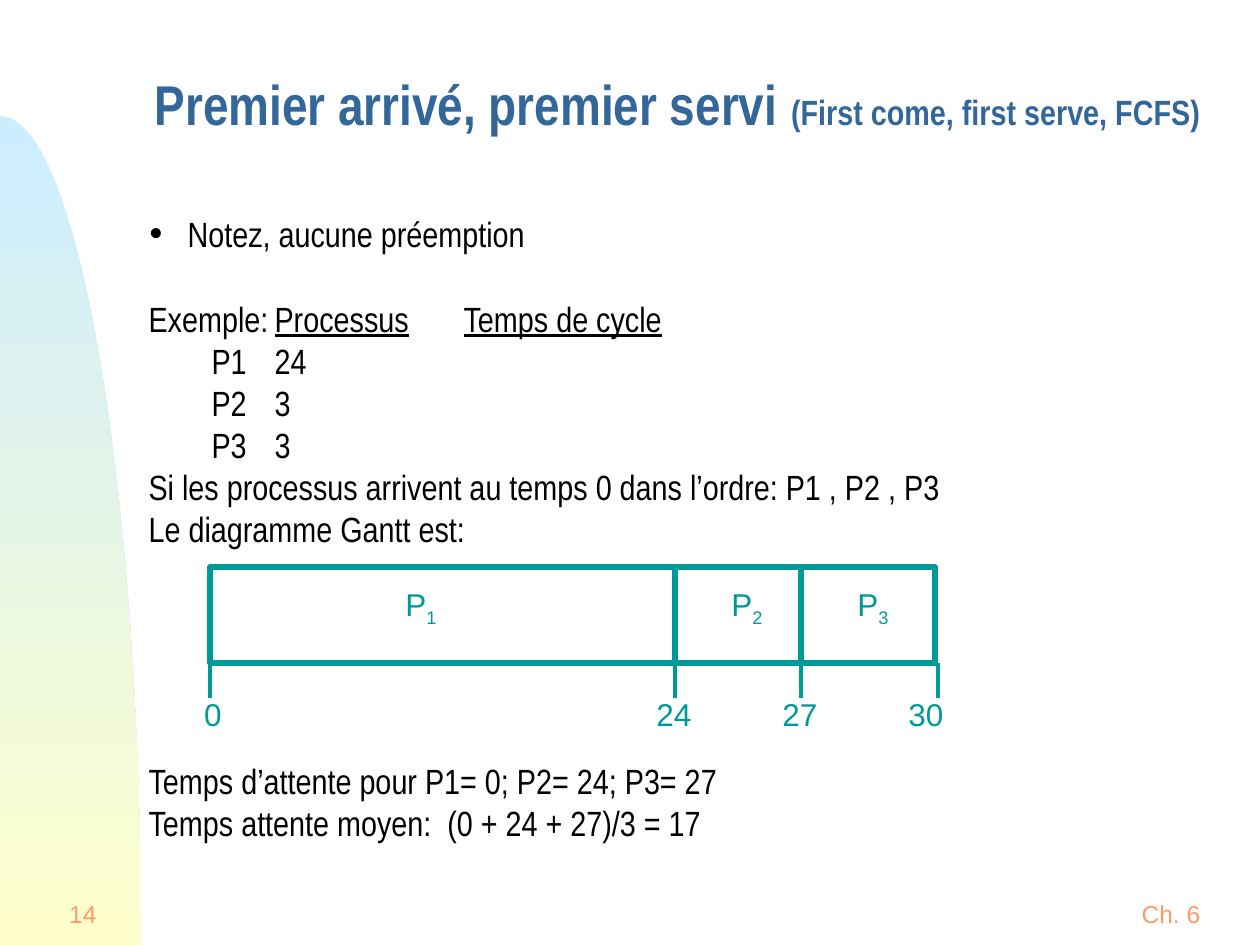
import dataclasses

import lxml.etree
import pptx
import pptx.dml.color
import pptx.enum.shapes
import pptx.enum.text
import pptx.oxml.ns
import pptx.util

SCALE = 914400 / 126
ALIGN = pptx.enum.text.PP_ALIGN
ANCHOR = pptx.enum.text.MSO_ANCHOR
NO_FIT = pptx.enum.text.MSO_AUTO_SIZE.NONE


def px(length):
    return pptx.util.Emu(round(length * SCALE))


def rgb(value):
    return pptx.dml.color.RGBColor.from_string(value)


def apply(target, values):
    for name, value in values.items():
        setattr(target, name, value)


def add_xml(parent, tag, **attributes):
    name = pptx.oxml.ns.qn(tag)
    return lxml.etree.SubElement(parent, name, **attributes)


@dataclasses.dataclass(frozen=True)
class Theme:
    paper: str = "FFFFFF"
    sky: str = "CCECFF"
    sand: str = "FFFFCC"
    heading: str = "336699"
    text: str = "010000"
    gantt: str = "009999"
    footer: str = "FF9966"
    heading_font: str = "Arial Narrow"
    label_font: str = "Arial"
    title_size: int = 32
    body_size: int = 20
    label_size: int = 18
    footer_size: int = 14
    body_pitch: int = 24
    frame_width: float = 3
    tick_width: float = 2.25


class SlideBuilder:
    def __init__(self, page, theme):
        self.page = page
        self.theme = theme

    def place(self, box, left, top, width, height):
        apply(box, {"left": px(left), "top": px(top),
                    "width": px(width), "height": px(height)})

    def span(self, para, text, size, color, font, **values):
        span = para.add_run()
        span.text = text
        apply(span.font, {"size": pptx.util.Pt(size), "name": font, **values})
        span.font.color.rgb = rgb(color)
        return span

    def title(self, bounds, main, detail):
        theme = self.theme
        box = self.page.shapes.title
        self.place(box, *bounds)
        apply(box.text_frame, {"auto_size": NO_FIT, "word_wrap": True,
                               "vertical_anchor": ANCHOR.MIDDLE})
        para = box.text_frame.paragraphs[0]
        apply(para, {"alignment": ALIGN.LEFT, "line_spacing": 0.7})
        for text, size in ((main, theme.title_size), (detail, theme.body_size)):
            self.span(para, text, size, theme.heading, theme.heading_font, bold=True)

    def body(self, bounds, lines):
        box = self.page.placeholders[1]
        self.place(box, *bounds)
        frame = box.text_frame
        apply(frame, {"auto_size": NO_FIT, "word_wrap": True,
                      "vertical_anchor": ANCHOR.TOP, "margin_top": px(13)})
        for index, line in enumerate(lines):
            para = frame.add_paragraph() if index else frame.paragraphs[0]
            self.body_line(para, **line)

    def body_line(self, para, parts, before=0, bullet=False, tabs=()):
        theme = self.theme
        apply(para, {"alignment": ALIGN.LEFT,
                     "line_spacing": pptx.util.Pt(theme.body_pitch),
                     "space_before": pptx.util.Pt(before),
                     "space_after": pptx.util.Pt(0)})
        properties = para._p.get_or_add_pPr()
        indent = px(39) if bullet else 0
        properties.set("marL", str(indent))
        properties.set("indent", str(-indent))
        if bullet:
            add_xml(properties, "a:buSzPct", val="120000")
            add_xml(properties, "a:buFont", typeface="Times New Roman")
            add_xml(properties, "a:buChar", char="•")
        else:
            add_xml(properties, "a:buNone")
        if tabs:
            stops = add_xml(properties, "a:tabLst")
            for stop in tabs:
                add_xml(stops, "a:tab", pos=str(px(stop)), algn="l")
        for text, underline in parts:
            self.span(para, text, theme.body_size, theme.text,
                      theme.heading_font, underline=underline)

    def label(self, bounds, text, size, color, align=ALIGN.CENTER, subscript=""):
        box = self.page.shapes.add_textbox(*map(px, bounds))
        apply(box.text_frame, {"word_wrap": False, "auto_size": NO_FIT,
                               "vertical_anchor": ANCHOR.MIDDLE})
        para = box.text_frame.paragraphs[0]
        para.alignment = align
        font = self.theme.label_font
        self.span(para, text, size, color, font)
        if subscript:
            span = self.span(para, subscript, size, color, font)
            span._r.get_or_add_rPr().set("baseline", "-25000")

    def frame(self, bounds):
        kind = pptx.enum.shapes.MSO_SHAPE.RECTANGLE
        box = self.page.shapes.add_shape(kind, *map(px, bounds))
        box.shadow.inherit = False
        box.fill.solid()
        box.fill.fore_color.rgb = rgb(self.theme.paper)
        box.line.color.rgb = rgb(self.theme.gantt)
        box.line.width = pptx.util.Pt(self.theme.frame_width)

    def upright(self, x, top, bottom, width):
        kind = pptx.enum.shapes.MSO_CONNECTOR.STRAIGHT
        line = self.page.shapes.add_connector(kind, px(x), px(top), px(x), px(bottom))
        line.line.color.rgb = rgb(self.theme.gantt)
        line.line.width = pptx.util.Pt(width)
        add_xml(line._element.spPr, "a:effectLst")

    def wave(self, start, first, second, end, steps=60):
        points = []
        for step in range(steps + 1):
            t = step / steps
            weights = ((1 - t) ** 3, 3 * t * (1 - t) ** 2, 3 * t * t * (1 - t), t ** 3)
            points.append(tuple(
                px(sum(weight * value for weight, value in zip(weights, axis)))
                for axis in zip(start, first, second, end)))
        outline = self.page.shapes.build_freeform(*points[0])
        outline.add_line_segments(points[1:] + [(px(start[0]), px(end[1]))], close=True)
        shape = outline.convert_to_shape()
        shape.shadow.inherit = False
        shape.line.fill.background()
        shape.fill.gradient()
        shape.fill.gradient_angle = 270
        for stop, color in zip(shape.fill.gradient_stops,
                               (self.theme.sky, self.theme.sand)):
            stop.color.rgb = rgb(color)

    def gantt(self, left, top, width, height, ticks, processes):
        theme = self.theme
        bottom = top + height
        self.frame((left, top, width, height))
        for number, center in enumerate(processes, 1):
            self.label((center - 29, top + 15, 58, 50), "P", theme.label_size,
                       theme.gantt, subscript=str(number))
        for x, _, _ in ticks[1:-1]:
            self.upright(x, top, bottom, theme.frame_width)
        for x, time, center in ticks:
            self.upright(x, bottom, bottom + 35, theme.tick_width)
            self.label((center - 30, bottom + 26, 60, 50), time,
                       theme.label_size, theme.gantt)


def main():
    deck = pptx.Presentation()
    apply(deck, {"slide_width": px(1260), "slide_height": px(945)})
    theme = Theme()
    slide = SlideBuilder(deck.slides.add_slide(deck.slide_layouts[1]), theme)

    slide.wave((0, 116), (78, 116), (141, 488), (141, 945))
    slide.title((142, 45, 1086, 132), "Premier arrivé, premier servi ",
                "(First come, first serve, FCFS)")

    header = [("Exemple:\t", False), ("Processus", True),
              ("\t", False), ("Temps de cycle", True)]
    cycles = (("P1", 24), ("P2", 3), ("P3", 3))
    closing = (("Si les processus arrivent au temps 0 dans l’ordre: P1 , P2 , P3", 0),
               ("Le diagramme Gantt est:", 0),
               ("Temps d’attente pour P1= 0; P2= 24; P3= 27", 120),
               ("Temps attente moyen:\u00a0 (0 + 24 + 27)/3 = 17".replace("\u00a0", " "), 0))
    lines = [{"parts": [("Notez, aucune préemption", False)], "bullet": True},
             {"parts": header, "before": 25, "tabs": (126, 402)}]
    lines += [{"parts": [(f"\t{name}\t{time}", False)], "tabs": (158, 504)}
              for name, time in cycles]
    lines += [{"parts": [(text, False)], "before": before} for text, before in closing]
    slide.body((136, 199, 995, 651), lines)

    slide.gantt(210, 567, 725, 96,
                ticks=((210, "0", 213), (675, "24", 674),
                       (801, "27", 800), (938, "30", 926)),
                processes=(421, 747, 873))
    slide.label((1113, 882, 116, 63), "Ch. 6", theme.footer_size, theme.footer)
    slide.label((21, 882, 88, 63), "14", theme.footer_size, theme.footer, ALIGN.RIGHT)
    deck.save("out.pptx")


if __name__ == "__main__":
    main()
